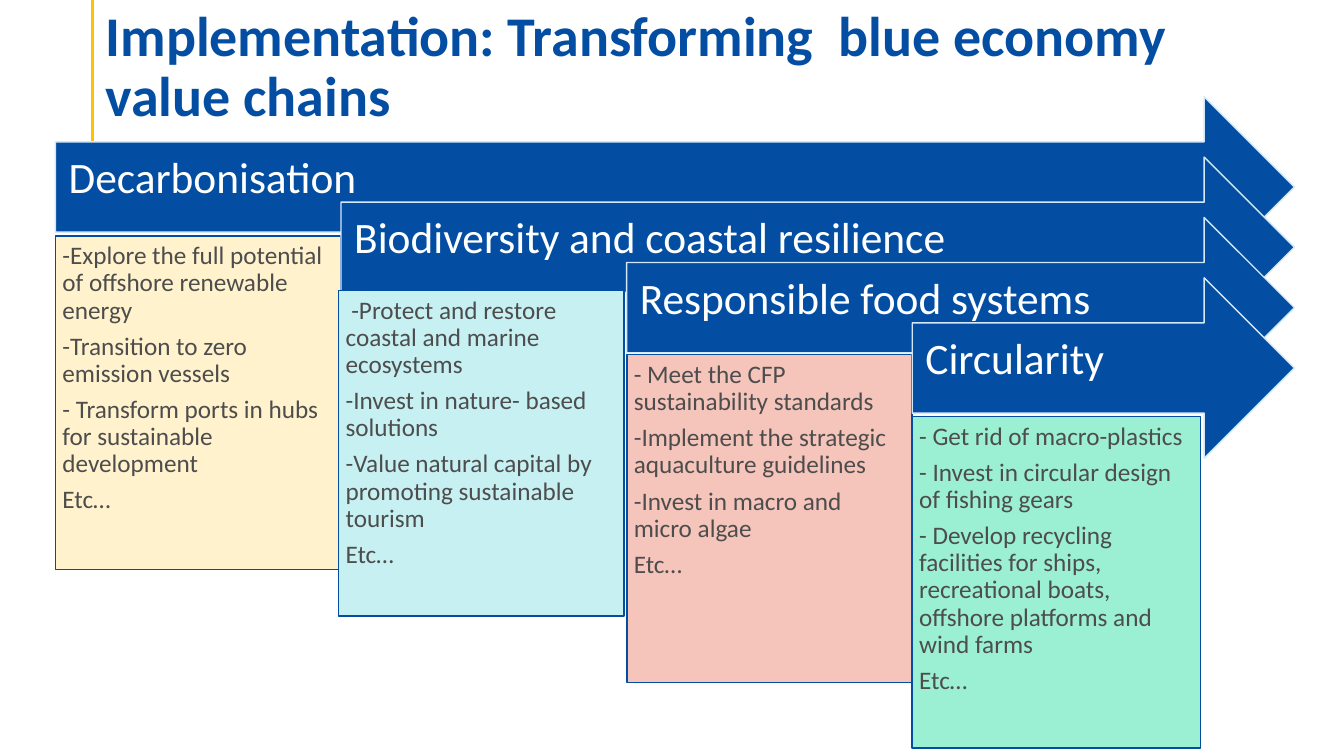
from pptx import Presentation
from pptx.dml.color import RGBColor
from pptx.enum.shapes import MSO_CONNECTOR, MSO_SHAPE
from pptx.enum.text import MSO_ANCHOR, PP_ALIGN
from pptx.util import Pt
from lxml import etree

ARROW = MSO_SHAPE.RIGHT_ARROW
RECTANGLE = MSO_SHAPE.RECTANGLE
STRAIGHT = MSO_CONNECTOR.STRAIGHT
TOP, MIDDLE, BOTTOM = MSO_ANCHOR.TOP, MSO_ANCHOR.MIDDLE, MSO_ANCHOR.BOTTOM
LEFT = PP_ALIGN.LEFT

FONT = "Calibri"
COLORS = {
    "blue": "034EA2",
    "pale_blue": "D3E8F9",
    "gold": "FFC000",
    "white": "FFFFFF",
    "grey": "4D4D4D",
    "cream": "FFF2CC",
    "aqua": "C7F0F3",
    "salmon": "F5C4BA",
    "mint": "9BEFD3",
}

ARROWS_LEFT, ARROWS_RIGHT, ARROWS_TOP = 39.6, 924.6, 69.1
STEP_X, STEP_Y, ARROW_HEIGHT = 204, 43.1, 128.9

VALUE_CHAINS = [
    ("Decarbonisation", "cream", (39.6, 168.5, 203.8, 238.3), [
        "-Explore the full potential of offshore renewable energy",
        "-Transition to zero emission vessels",
        "- Transform ports in hubs for sustainable development",
        "Etc…",
    ]),
    ("Biodiversity and coastal resilience", "aqua", (241.9, 207.4, 203.8, 232.6), [
        " -Protect and restore coastal and marine ecosystems",
        "-Invest in nature- based solutions",
        "-Value natural capital by promoting sustainable tourism",
        "Etc…",
    ]),
    ("Responsible food systems", "salmon", (447.8, 253.4, 203.8, 234), [
        "- Meet the CFP sustainability standards",
        "-Implement the strategic aquaculture guidelines",
        "-Invest in macro and micro algae",
        "Etc…",
    ]),
    ("Circularity", "mint", (651.6, 297.4, 205.9, 236.9), [
        "- Get rid of macro-plastics",
        "- Invest in circular design of fishing gears",
        "- Develop recycling facilities for ships, recreational boats, "
        "offshore platforms and wind farms",
        "Etc…",
    ]),
]


def rgb(name):
    return RGBColor.from_string(COLORS[name])


def write(shape, lines, size, color, bold=False, anchor=TOP, insets=(0, 0, 0, 0), after=0):
    frame = shape.text_frame
    frame.word_wrap = True
    frame.vertical_anchor = anchor
    (frame.margin_left, frame.margin_top,
     frame.margin_right, frame.margin_bottom) = [Pt(inset) for inset in insets]
    for index, line in enumerate(lines):
        paragraph = frame.add_paragraph() if index else frame.paragraphs[0]
        paragraph.alignment = LEFT
        paragraph.line_spacing = 0.9
        paragraph.space_after = Pt(after)
        run = paragraph.add_run()
        run.text = line
        run.font.name = FONT
        run.font.size = Pt(size)
        run.font.bold = bold
        run.font.color.rgb = rgb(color)


def panel(slide, kind, box, fill, outline):
    shape = slide.shapes.add_shape(kind, *[Pt(length) for length in box])
    shape.shadow.inherit = False
    shape.fill.solid()
    shape.fill.fore_color.rgb = rgb(fill)
    shape.line.color.rgb = rgb(outline)
    shape.line.width = Pt(1)
    return shape


def accent_line(slide, x, top, bottom):
    rule = slide.shapes.add_connector(STRAIGHT, Pt(x), Pt(top), Pt(x), Pt(bottom))
    rule.line.color.rgb = rgb("gold")
    rule.line.width = Pt(2.25)
    etree.SubElement(
        rule._element.spPr,
        "{http://schemas.openxmlformats.org/drawingml/2006/main}effectLst")


def title(slide, box):
    heading = slide.shapes.add_textbox(*[Pt(length) for length in box])
    write(heading, ["Implementation: Transforming  blue economy value chains"],
          40, "blue", bold=True, anchor=BOTTOM, insets=(7.2, 3.6, 7.2, 0))


def chain_arrow(slide, box, name):
    arrow = panel(slide, ARROW, box, "blue", "pale_blue")
    write(arrow, [name], 31, "white", anchor=MIDDLE, insets=(9.4, 9.4, 20, 20))


def action_card(slide, box, fill, actions):
    card = panel(slide, RECTANGLE, box, fill, "blue")
    write(card, actions, 18, "grey", insets=(5, 5, 5, 5), after=6.3)


def main():
    deck = Presentation()
    deck.slide_width, deck.slide_height = Pt(960), Pt(540)
    slide = deck.slides.add_slide(deck.slide_layouts[6])
    accent_line(slide, 66.2, 0, 100.8)
    for index, (name, fill, card_box, actions) in enumerate(VALUE_CHAINS):
        left = ARROWS_LEFT + index * STEP_X
        top = ARROWS_TOP + index * STEP_Y
        chain_arrow(slide, (left, top, ARROWS_RIGHT - left, ARROW_HEIGHT), name)
        action_card(slide, card_box, fill, actions)
    title(slide, (68.4, 30.2, 828, 61.9))
    deck.save("out.pptx")


if __name__ == "__main__":
    main()
